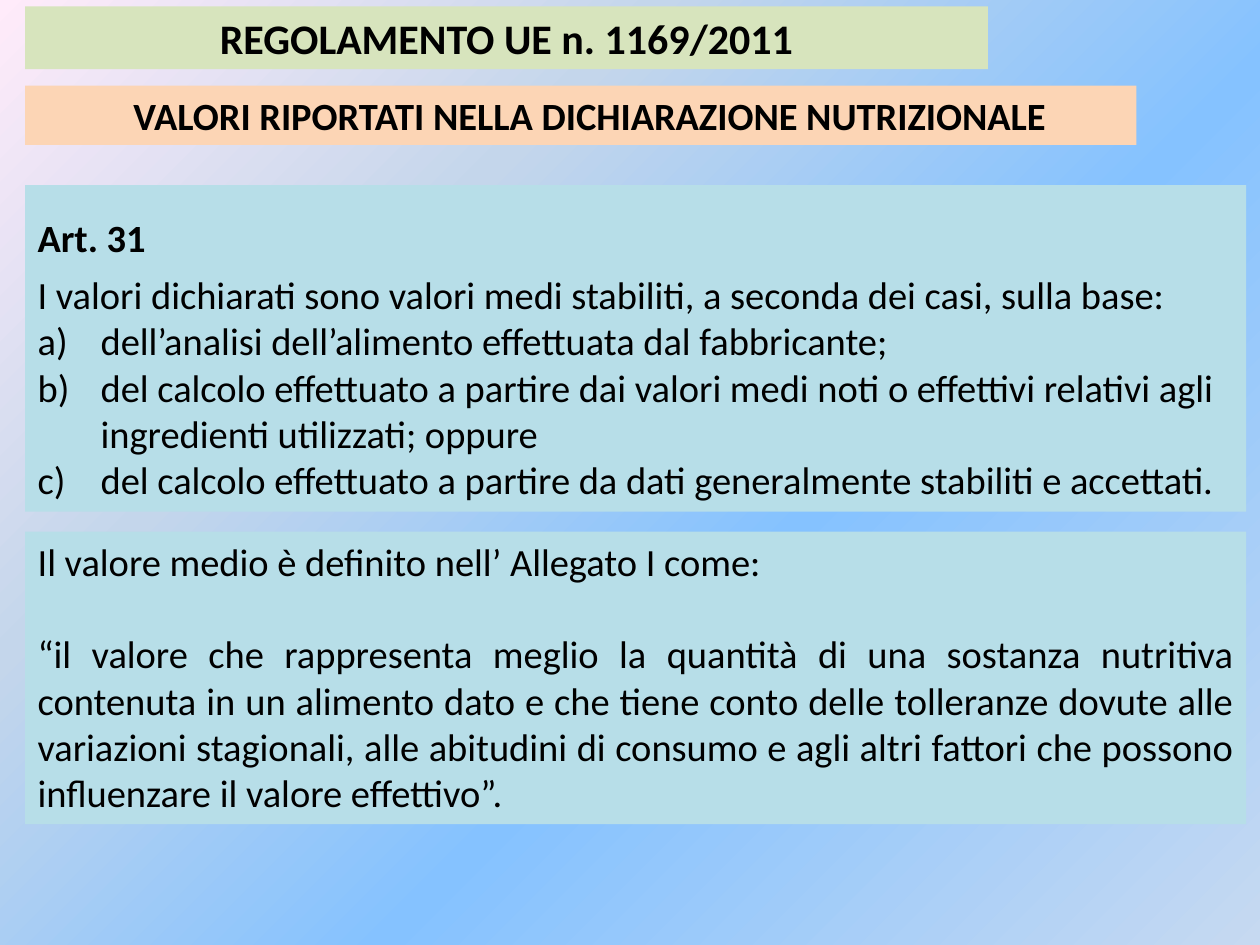
"""Builds a slide on the values given in a nutrition declaration."""
from lxml import etree
from pptx import Presentation
from pptx.dml.color import RGBColor
from pptx.enum.shapes import MSO_SHAPE
from pptx.enum.text import MSO_ANCHOR, MSO_AUTO_SIZE, PP_ALIGN
from pptx.oxml import parse_xml
from pptx.oxml.ns import nsdecls, qn
from pptx.util import Inches, Pt

RECTANGLE = MSO_SHAPE.RECTANGLE
TOP = MSO_ANCHOR.TOP
GROW = MSO_AUTO_SIZE.SHAPE_TO_FIT_TEXT
LEFT, CENTER, JUSTIFY = PP_ALIGN.LEFT, PP_ALIGN.CENTER, PP_ALIGN.JUSTIFY

BLACK = RGBColor(0x00, 0x00, 0x00)
GREEN = RGBColor(0xD7, 0xE4, 0xBD)
PEACH = RGBColor(0xFC, 0xD5, 0xB5)
AQUA = RGBColor(0xB7, 0xDE, 0xE8)
PALE_BLUE = RGBColor(0xC6, 0xD9, 0xF1)
SKY = RGBColor(0x85, 0xC2, 0xFF)
MIST = RGBColor(0xC4, 0xD6, 0xEB)
PINK = RGBColor(0xFF, 0xEB, 0xFA)
GRADIENT = [(0, PALE_BLUE, 36), (40, SKY, 100), (70, MIST, 100), (100, PINK, 100)]

BASES = [
    "dell’analisi dell’alimento effettuata dal fabbricante;",
    "del calcolo effettuato a partire dai valori medi noti o effettivi relativi agli "
    "ingredienti utilizzati; oppure",
    "del calcolo effettuato a partire da dati generalmente stabiliti e accettati.",
]
DEFINITION = (
    "“il valore che rappresenta meglio la quantità di una sostanza nutritiva contenuta "
    "in un alimento dato e che tiene conto delle tolleranze dovute alle variazioni "
    "stagionali, alle abitudini di consumo e agli altri fattori che possono influenzare "
    "il valore effettivo”."
)


class RegulationSlide:
    """Holds the style and the current slide."""

    font = "Calibri"
    body_size = 22
    left = 0.2

    def __init__(self, slide):
        self.slide = slide

    def background(self, stops):
        """Fills the background with a radial gradient from the lower right."""
        colours = "".join(
            f'<a:gs pos="{place * 1000}"><a:srgbClr val="{colour}">'
            f'<a:alpha val="{opacity * 1000}"/></a:srgbClr></a:gs>'
            for place, colour, opacity in stops
        )
        self.slide.background.fill.solid()
        properties = self.slide.element.find(".//" + qn("p:bgPr"))
        properties.replace(properties[0], parse_xml(
            f'<a:gradFill {nsdecls("a")} rotWithShape="1"><a:gsLst>{colours}</a:gsLst>'
            '<a:path path="circle"><a:fillToRect l="100000" t="100000"/></a:path>'
            "</a:gradFill>"
        ))

    def panel(self, top, width, height, colour):
        """Adds a filled panel and returns its text frame."""
        panel = self.slide.shapes.add_shape(
            RECTANGLE, Inches(self.left), Inches(top), Inches(width), Inches(height))
        panel.shadow.inherit = False
        panel.fill.solid()
        panel.fill.fore_color.rgb = colour
        panel.line.fill.background()
        frame = panel.text_frame
        frame.word_wrap = True
        frame.auto_size = GROW
        frame.vertical_anchor = TOP
        return frame

    def paragraph(self, frame, text, size=body_size, bold=False, align=LEFT):
        """Writes text in the first free paragraph of a frame."""
        paragraph = frame.paragraphs[0]
        if paragraph.runs:
            paragraph = frame.add_paragraph()
        paragraph.alignment = align
        run = paragraph.add_run()
        run.text = text
        run.font.name = self.font
        run.font.size = Pt(size)
        run.font.bold = bold
        run.font.color.rgb = BLACK
        return paragraph

    def lettered(self, frame, text):
        """Writes one item of a lettered list."""
        properties = self.paragraph(frame, text)._p.get_or_add_pPr()
        properties.set("marL", str(Inches(0.5)))
        properties.set("indent", str(-Inches(0.5)))
        etree.SubElement(properties, qn("a:buFont"), typeface="+mj-lt")
        etree.SubElement(properties, qn("a:buAutoNum"), type="alphaLcParenR")


def main():
    """Builds and saves the slide."""
    deck = Presentation()
    deck.slide_width, deck.slide_height = Inches(10), Inches(7.5)
    page = RegulationSlide(deck.slides.add_slide(deck.slide_layouts[6]))
    page.background(GRADIENT)

    regulation = page.panel(0.05, 7.64, 0.5, GREEN)
    page.paragraph(regulation, "REGOLAMENTO UE n. 1169/2011", 24, True, CENTER)

    topic = page.panel(0.68, 8.82, 0.47, PEACH)
    topic.margin_left = Inches(0.24)
    page.paragraph(topic, "VALORI RIPORTATI NELLA DICHIARAZIONE NUTRIZIONALE",
                   bold=True, align=CENTER)

    article = page.panel(1.47, 9.69, 2.59, AQUA)
    heading = page.paragraph(article, "Art. 31", bold=True)
    heading.line_spacing = 1.5
    heading.space_after = Pt(6)
    page.paragraph(article, "I valori dichiarati sono valori medi stabiliti, "
                            "a seconda dei casi, sulla base:")
    for basis in BASES:
        page.lettered(article, basis)

    average = page.panel(4.22, 9.69, 2.32, AQUA)
    page.paragraph(average, "Il valore medio è definito nell’ Allegato I come:")
    definition = page.paragraph(average, DEFINITION, align=JUSTIFY)
    definition.space_before = Pt(26.5)

    deck.save("out.pptx")


if __name__ == "__main__":
    main()
